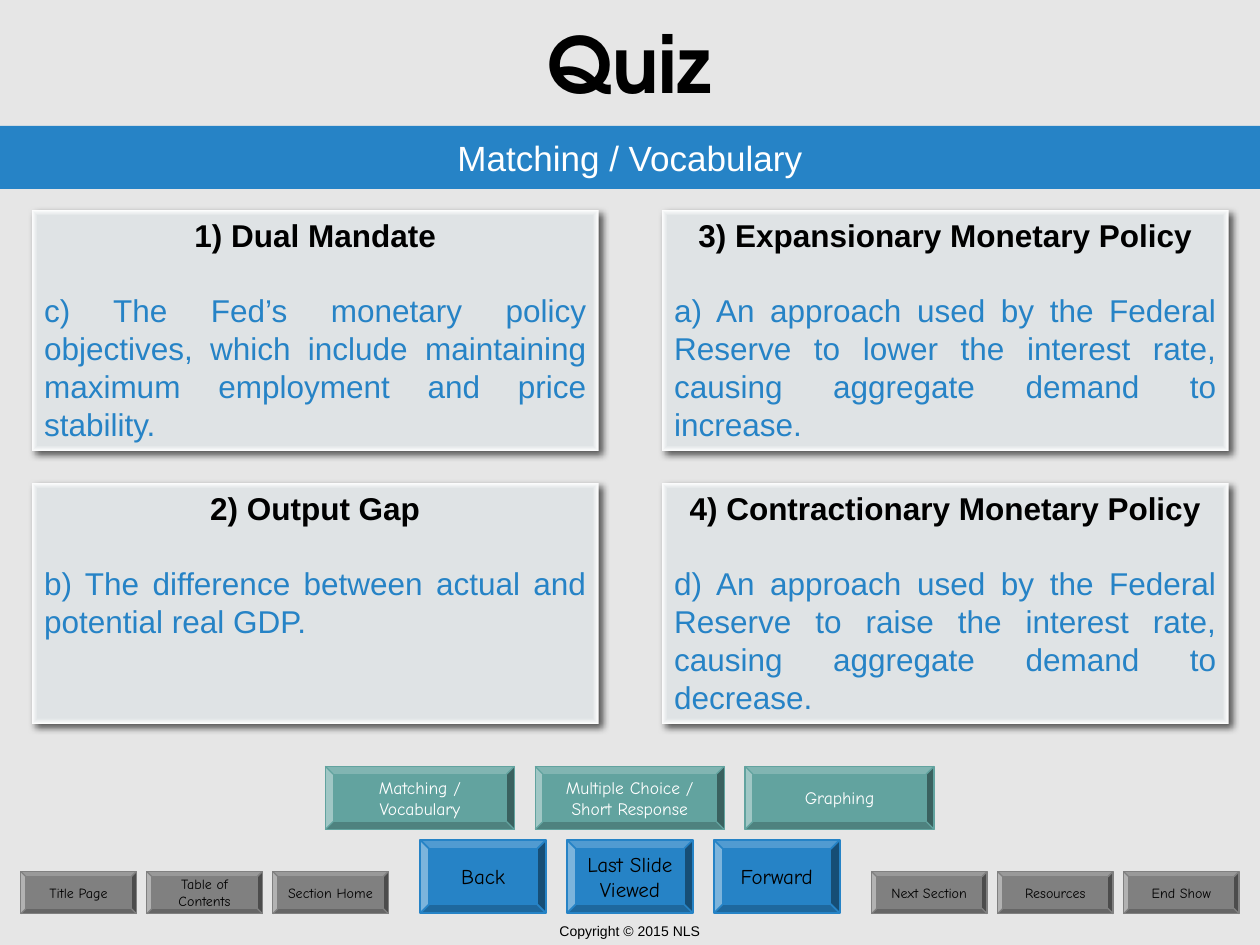
"""Build a vocabulary quiz slide with answer cards and navigation buttons."""
from pptx import Presentation
from pptx.dml.color import RGBColor
from pptx.enum.shapes import MSO_SHAPE as Shape
from pptx.enum.text import MSO_ANCHOR as Anchor, PP_ALIGN as Align
from pptx.oxml import parse_xml
from pptx.oxml.ns import nsdecls, qn
from pptx.util import Cm, Pt

BLUE, TEAL, GREY = "2683C6", "62A39F", "808080"
BLACK, WHITE = "000000", "FFFFFF"
BODY, HAND, HEAD = "Arial", "Comic Neue", "TeX Gyre Adventor"

CARDS = [
    [("1) Dual Mandate",
      "c) The Fed’s monetary policy objectives, which include maintaining "
      "maximum employment and price stability."),
     ("2) Output Gap",
      "b) The difference between actual and potential real GDP.")],
    [("3) Expansionary Monetary Policy",
      "a) An approach used by the Federal Reserve to lower the interest "
      "rate, causing aggregate demand to increase."),
     ("4) Contractionary Monetary Policy",
      "d) An approach used by the Federal Reserve to raise the interest "
      "rate, causing aggregate demand to decrease.")],
]


def color(code):
    return RGBColor.from_string(code)


class Deck:
    """Hold the style and the current slide."""

    def __init__(self):
        self.file = Presentation()
        self.file.slide_width, self.file.slide_height = Cm(25.4), Cm(19.05)
        self.slide = self.file.slides.add_slide(self.file.slide_layouts[5])
        fill = self.slide.background.fill
        fill.solid()
        fill.fore_color.rgb = color("E6E6E6")

    def add_run(self, para, text, size, font, tone, bold=False, align=Align.CENTER):
        para.alignment = align
        run = para.add_run()
        run.text = text
        run.font.size, run.font.name, run.font.bold = Pt(size), font, bold
        run.font.color.rgb = color(tone)

    def title(self, text):
        head = self.slide.shapes.title
        head.left, head.top, head.width, head.height = Cm(0), Cm(0), Cm(25.4), Cm(2.54)
        head.text_frame.vertical_anchor = Anchor.MIDDLE
        self.add_run(head.text_frame.paragraphs[0], text, 44, HEAD, BLACK, True)

    def label(self, text, box):
        frame = self.slide.shapes.add_textbox(*map(Cm, box)).text_frame
        frame.word_wrap = True
        frame.vertical_anchor = Anchor.MIDDLE
        self.add_run(frame.paragraphs[0], text, 8, BODY, BLACK)

    def block(self, kind, box, fill=None):
        item = self.slide.shapes.add_shape(kind, *map(Cm, box))
        item.shadow.inherit = False
        item.line.fill.background()
        item.text_frame.word_wrap = True
        item.text_frame.vertical_anchor = Anchor.MIDDLE
        if fill:
            item.fill.solid()
            item.fill.fore_color.rgb = color(fill)
        return item

    def band(self, text, box):
        item = self.block(Shape.RECTANGLE, box, BLUE)
        self.add_run(item.text_frame.paragraphs[0], text, 20, BODY, WHITE)

    def card(self, term, answer, box):
        item = self.block(Shape.RECTANGLE, box)
        item.fill.gradient()
        for stop, spot, tone in zip(item.fill.gradient_stops, (0.95, 1), ("DFE3E5", WHITE)):
            stop.position = spot
            stop.color.rgb = color(tone)
        props = item.element.spPr
        grad = props.find(qn("a:gradFill"))
        grad.replace(grad.find(qn("a:lin")), parse_xml(
            f'<a:path {nsdecls("a")} path="shape">'
            '<a:fillToRect l="50000" t="50000" r="50000" b="50000"/></a:path>'))
        props.find(qn("a:effectLst")).append(parse_xml(
            f'<a:outerShdw {nsdecls("a")} blurRad="{Pt(4)}" dist="{Pt(3)}" '
            'dir="2700000" algn="tl" rotWithShape="0"><a:srgbClr val="000000">'
            '<a:alpha val="64000"/></a:srgbClr></a:outerShdw>'))
        frame = item.text_frame
        frame.vertical_anchor = Anchor.TOP
        self.add_run(frame.paragraphs[0], term, 18, BODY, BLACK, True)
        para = frame.add_paragraph()
        para.space_before = Pt(21.5)
        self.add_run(para, answer, 18, BODY, BLUE, align=Align.JUSTIFY)

    def row(self, names, box, step, fill, size, tone=BLACK, line=0.75):
        left, *rest = box
        for i, name in enumerate(names):
            item = self.block(Shape.BEVEL, (left + i * step, *rest), fill)
            item.line.color.rgb = color(fill)
            item.line.width = Pt(line)
            frame = item.text_frame
            frame.word_wrap = False
            for j, text in enumerate(name.split("\n")):
                para = frame.add_paragraph() if j else frame.paragraphs[0]
                self.add_run(para, text, size, HAND, tone)


def main():
    deck = Deck()
    deck.label("Copyright © 2015 NLS", (0, 18.47, 25.4, 0.58))
    deck.row(["Back", "Last Slide\nViewed", "Forward"],
             (8.47, 16.93, 2.54, 1.48), 2.96, BLUE, 12, line=1)
    deck.row(["Title Page", "Table of\nContents", "Section Home"],
             (0.42, 17.57, 2.33, 0.85), 2.54, GREY, 8)
    deck.row(["Next Section", "Resources", "End Show"],
             (17.57, 17.57, 2.33, 0.85), 2.54, GREY, 8)
    deck.title("Quiz")
    deck.row(["Matching /\nVocabulary", "Multiple Choice /\nShort Response", "Graphing"],
             (6.56, 15.45, 3.81, 1.27), 4.23, TEAL, 10, WHITE)
    deck.band("Matching / Vocabulary", (0, 2.54, 25.4, 1.27))
    for i, col in enumerate(CARDS):
        for j, (term, answer) in enumerate(col):
            deck.card(term, answer, (0.64 + i * 12.7, 4.23 + j * 5.5, 11.43, 4.87))
    deck.file.save("out.pptx")


if __name__ == "__main__":
    main()
